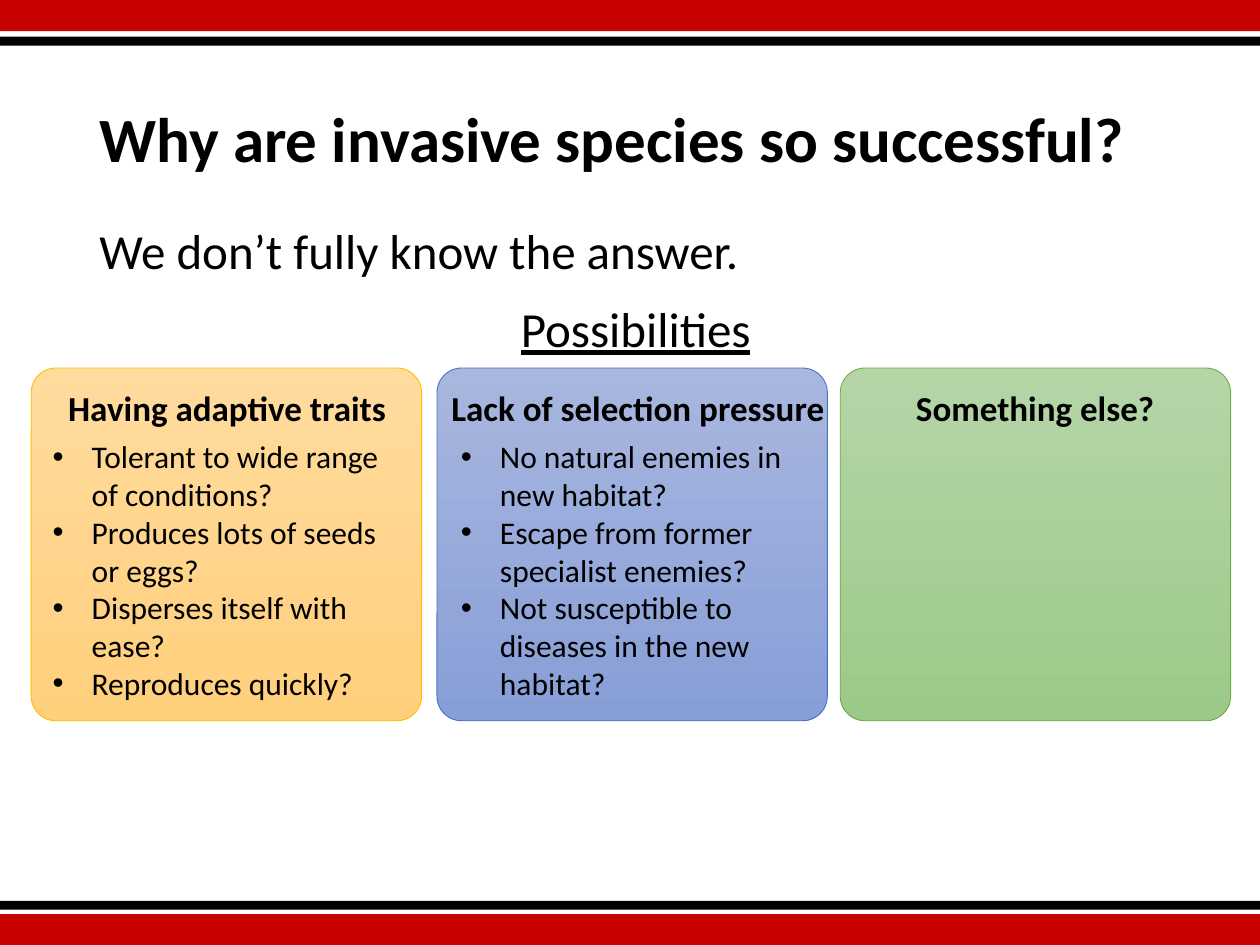
from lxml.etree import SubElement
from pptx import Presentation
from pptx.dml.color import RGBColor
from pptx.enum.shapes import MSO_SHAPE
from pptx.enum.text import MSO_ANCHOR, MSO_AUTO_SIZE, PP_ALIGN
from pptx.oxml.ns import qn
from pptx.util import Cm, Pt

COLOURS = {
    "red": "C80200", "black": "000000",
    "amber": ("FFDB9E", "FFD07C", "FFC000"),
    "blue": ("A8B7DF", "889ED7", "4472C4"),
    "green": ("B5D5A7", "9CC987", "70AD47"),
}
BARS = [(0, 0.63, "red"), (18.43, 0.63, "red"), (0.74, 0.18, "black"), (18.16, 0.18, "black")]
CARDS = [
    {"left": 0.63, "colours": "amber", "heading": "Having adaptive traits",
     "heading_left": 1.09, "heading_width": 6.98, "list_left": 0.81, "list_width": 7.57,
     "items": ["Tolerant to wide range of conditions?", "Produces lots of seeds or eggs?",
               "Disperses itself with ease?", "Reproduces quickly?"]},
    {"left": 8.81, "colours": "blue", "heading": "Lack of selection pressure",
     "heading_left": 8.81, "heading_width": 8.1, "list_left": 9.04, "list_width": 7.47,
     "items": ["No natural enemies in new habitat?", "Escape from former specialist enemies?",
               "Not susceptible to diseases in the new habitat?"]},
    {"left": 16.94, "colours": "green", "heading": "Something else?",
     "heading_left": 18.19, "heading_width": 5.36, "items": []},
]


def rgb(value):
    """Turn a hex string into a colour."""
    return RGBColor.from_string(value)


def place(shape, left, top, width, height):
    """Move and size a shape in centimetres."""
    shape.left, shape.top, shape.width, shape.height = map(Cm, (left, top, width, height))


def format_paragraph(paragraph, size, bold=False, underline=False):
    """Set the font of a whole paragraph."""
    font = paragraph.font
    font.name, font.size, font.bold, font.underline = "Calibri", Pt(size), bold, underline
    font.color.rgb = rgb(COLOURS["black"])


def set_bullet(paragraph, character=None, indent=0):
    """Give a paragraph a hanging bullet, or none."""
    properties = paragraph._p.get_or_add_pPr()
    properties.set("marL", str(Cm(indent)))
    properties.set("indent", str(-Cm(indent)))
    if character:
        SubElement(properties, qn("a:buFont"), typeface="Arial")
        SubElement(properties, qn("a:buChar"), char=character)
    else:
        SubElement(properties, qn("a:buNone"))


def fill_placeholder(shape, box, text, size, anchor, bold=False):
    """Write one left-aligned paragraph into a template placeholder."""
    place(shape, *box)
    frame = shape.text_frame
    frame.text = text
    frame.auto_size = MSO_AUTO_SIZE.NONE
    frame.vertical_anchor = anchor
    paragraph = frame.paragraphs[0]
    set_bullet(paragraph)
    paragraph.alignment = PP_ALIGN.LEFT
    paragraph.line_spacing = 0.9
    paragraph.space_before = Pt(0)
    format_paragraph(paragraph, size, bold)


def add_bar(slide, top, height, colour):
    """Draw a band across the slide."""
    bar = slide.shapes.add_shape(MSO_SHAPE.RECTANGLE, 0, Cm(top), Cm(25.4), Cm(height))
    bar.shadow.inherit = False
    bar.fill.solid()
    bar.fill.fore_color.rgb = rgb(COLOURS[colour])
    bar.line.fill.background()


def add_label(slide, box, text, size, **style):
    """Add a centred single-line label."""
    frame = slide.shapes.add_textbox(*map(Cm, box)).text_frame
    frame.word_wrap = False
    frame.text = text
    frame.paragraphs[0].alignment = PP_ALIGN.CENTER
    format_paragraph(frame.paragraphs[0], size, **style)


def add_bullets(slide, box, items):
    """Add a bulleted list."""
    frame = slide.shapes.add_textbox(*map(Cm, box)).text_frame
    frame.word_wrap = True
    frame.text = "\n".join(items)
    for paragraph in frame.paragraphs:
        set_bullet(paragraph, "•", 0.79)
        format_paragraph(paragraph, 18)


def add_card(slide, card):
    """Draw a rounded gradient card with its heading and list."""
    shape = slide.shapes.add_shape(
        MSO_SHAPE.ROUNDED_RECTANGLE, Cm(card["left"]), Cm(7.42), Cm(7.87), Cm(7.11))
    shape.adjustments[0] = 0.07
    shape.shadow.inherit = False
    start, end, outline = COLOURS[card["colours"]]
    shape.fill.gradient()
    shape.fill.gradient_angle = 270
    for stop, colour, position in zip(shape.fill.gradient_stops, (start, end), (0, 1)):
        stop.color.rgb = rgb(colour)
        stop.position = position
    shape.line.color.rgb = rgb(outline)
    shape.line.width = Pt(0.5)
    if card["items"]:
        add_bullets(slide, (card["list_left"], 8.69, card["list_width"], 5.64), card["items"])
    add_label(slide, (card["heading_left"], 7.67, card["heading_width"], 1.12),
              card["heading"], 20, bold=True)


def main():
    """Build and save the slide."""
    presentation = Presentation()
    presentation.slide_width, presentation.slide_height = Cm(25.4), Cm(19.05)
    slide = presentation.slides.add_slide(presentation.slide_layouts[1])
    for bar in BARS:
        add_bar(slide, *bar)
    fill_placeholder(slide.shapes.title, (1.75, 1.02, 21.9, 3.68),
                     "Why are invasive species so successful?", 36, MSO_ANCHOR.MIDDLE, True)
    fill_placeholder(slide.placeholders[1], (1.75, 4.45, 21.9, 12.09),
                     "We don’t fully know the answer.", 28, MSO_ANCHOR.TOP)
    add_label(slide, (10.21, 5.89, 5.21, 1.45), "Possibilities", 28, underline=True)
    for card in CARDS:
        add_card(slide, card)
    presentation.save("out.pptx")


if __name__ == "__main__":
    main()
